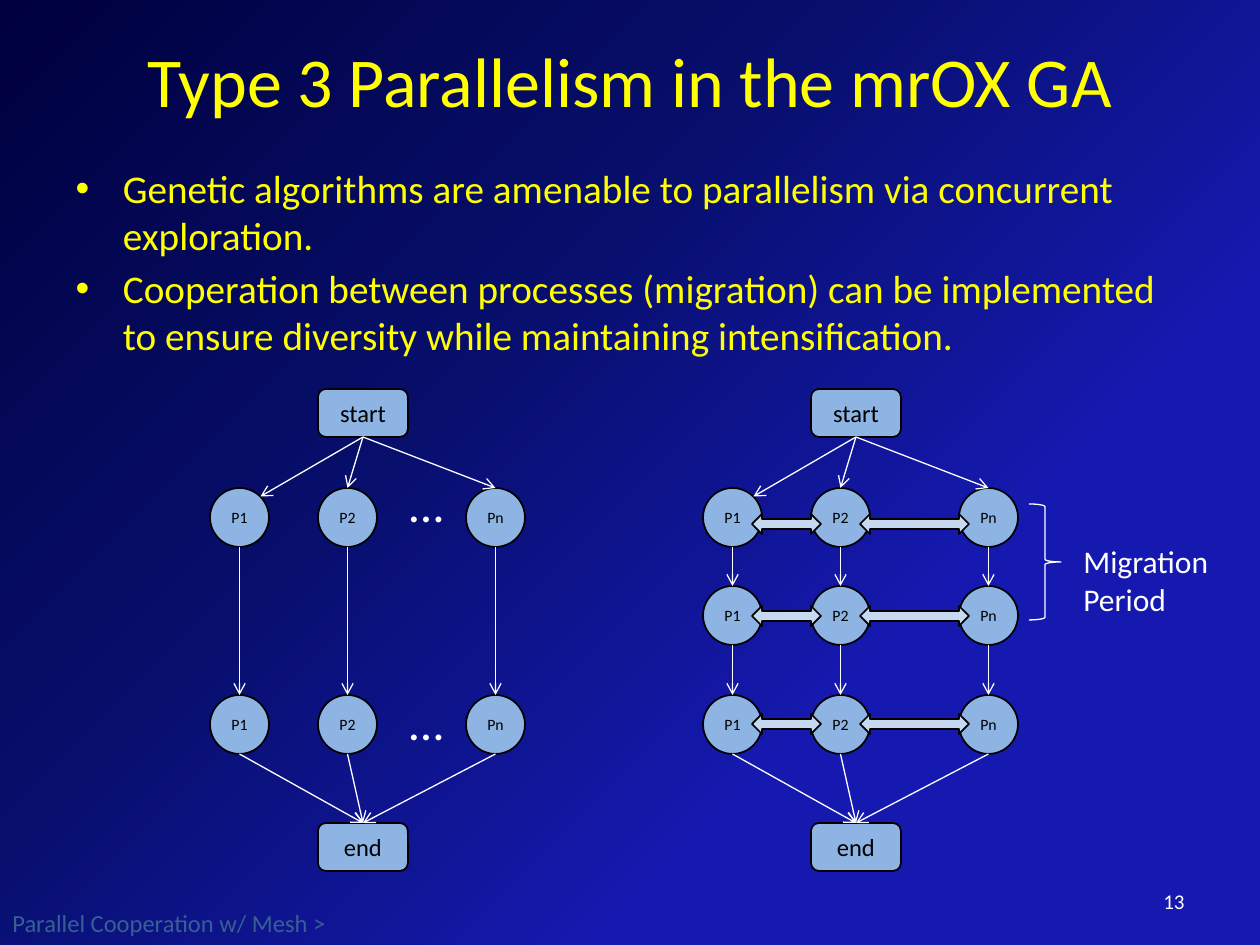
from lxml import etree
from pptx import Presentation
from pptx import util as u
from pptx.dml.color import RGBColor
from pptx.enum import shapes as s, text as t
from pptx.oxml import ns

# Content
TITLE = "Type 3 Parallelism in the mrOX GA"
BULLETS = [
    "Genetic algorithms are amenable to parallelism via concurrent exploration.",
    "Cooperation between processes (migration) can be implemented to ensure "
    "diversity while maintaining intensification.",
]
PROCESSES = {"P1": 210, "P2": 318, "Pn": 466}  # left edges in the first diagram
DIAGRAMS = [
    {"dx": 0, "rows": [488, 695], "dots": [467, 685], "migrations": []},
    {"dx": 493, "rows": [488, 586, 695], "dots": [], "migrations": [514, 606, 714]},
]
MIGRATION_LABEL = ["Migration", "Period"]
SLIDE_NUMBER = "13"
BREADCRUMB = "Parallel Cooperation w/ Mesh >"

# Format
COLORS = {"heading": "FFFF00", "node": "8EB4E3", "migration": "C6D9F1",
          "dark": "000000", "light": "FFFFFF", "breadcrumb": "376092"}
BACKGROUND = [(0, "00003E"), (36, "070E69"), (70, "1519AF"), (100, "1519AF")]
FONT = "Calibri"
NODE = 59
TERMINAL_LEFT, TERMINAL_W, TERMINAL_H = 318, 90, 48
START_TOP, END_TOP = 389, 823
NO_INSETS = {f"margin_{side}": 0 for side in ("left", "right", "top", "bottom")}


def px(value):
    return u.Emu(round(value * 914400 / 126))


def rgb(name):
    return RGBColor.from_string(COLORS[name])


def set_all(target, values):
    for key, value in values.items():
        setattr(target, key, value)


def place(part, left, top, width, height):
    set_all(part, {"left": px(left), "top": px(top),
                   "width": px(width), "height": px(height)})


def write(frame, lines, size, color, align=None, space=None, **frame_format):
    set_all(frame, frame_format)
    for i, line in enumerate(lines):
        paragraph = frame.paragraphs[0] if i == 0 else frame.add_paragraph()
        set_all(paragraph, {"alignment": align, "space_before": space})
        run = paragraph.add_run()
        run.text = line
        set_all(run.font, {"size": u.Pt(size), "name": FONT})
        run.font.color.rgb = rgb(color)


def add_label(parent, box, lines, size, color, align=None, **frame_format):
    label = parent.add_textbox(*map(px, box))
    write(label.text_frame, lines, size, color, align,
          **{"word_wrap": False, **frame_format})


def add_outline(parent, kind, box, line="dark", width=1, fill=None):
    part = parent.add_shape(kind, *map(px, box))
    part.shadow.inherit = False
    if fill:
        part.fill.solid()
        part.fill.fore_color.rgb = rgb(fill)
    else:
        part.fill.background()
    part.line.color.rgb = rgb(line)
    part.line.width = u.Pt(width)
    return part


def add_node(parent, kind, box, name, size):
    node = add_outline(parent, kind, box, fill="node")
    write(node.text_frame, [name], size, "dark", t.PP_ALIGN.CENTER,
          vertical_anchor=t.MSO_ANCHOR.MIDDLE, word_wrap=False, **NO_INSETS)


def add_arrow(parent, start, end):
    arrow = parent.add_connector(s.MSO_CONNECTOR.STRAIGHT, *map(px, (*start, *end)))
    arrow.line.color.rgb = rgb("light")
    arrow.line.width = u.Pt(0.75)
    etree.SubElement(arrow.line._get_or_add_ln(), ns.qn("a:tailEnd"), type="arrow")
    etree.SubElement(arrow._element.spPr, ns.qn("a:effectLst"))


def add_diagram(slide, dx, rows, dots, migrations):
    parts = slide.shapes.add_group_shape().shapes
    lefts = [left + dx for left in PROCESSES.values()]
    centers = [left + NODE / 2 for left in lefts]
    terminal = TERMINAL_LEFT + dx
    middle = terminal + TERMINAL_W / 2

    # Start, end and processes
    for name, top in (("start", START_TOP), ("end", END_TOP)):
        add_node(parts, s.MSO_SHAPE.ROUNDED_RECTANGLE,
                 (terminal, top, TERMINAL_W, TERMINAL_H), name, 14)
    for top in rows:
        for name, left in zip(PROCESSES, lefts):
            add_node(parts, s.MSO_SHAPE.OVAL, (left, top, NODE, NODE), name, 9)
    for top in dots:
        add_label(parts, (397 + dx, top, 55, 68), ["…"], 28, "light")

    # Flow arrows; the first one meets its circle at the upper right
    for i, center in enumerate(centers):
        reach = 21 if i == 0 else 0
        drop = NODE / 2 - reach if i == 0 else 0
        add_arrow(parts, (middle, START_TOP + TERMINAL_H),
                  (center + reach, rows[0] + drop))
        for upper, lower in zip(rows, rows[1:]):
            add_arrow(parts, (center, upper + NODE), (center, lower))
        add_arrow(parts, (center, rows[-1] + NODE), (middle, END_TOP))

    # Migrations overlap both neighbouring circles by 10 px
    for top in migrations:
        for left, following in zip(lefts, lefts[1:]):
            begin, end = left + NODE - 10, following + 10
            add_outline(parts, s.MSO_SHAPE.LEFT_RIGHT_ARROW,
                        (begin, top, end - begin, 20), fill="migration")
    if migrations:
        add_outline(parts, s.MSO_SHAPE.RIGHT_BRACE, (1029, 504, 32, 116),
                    line="light", width=0.75)
        add_label(parts, (1071, 536, 151, 89), MIGRATION_LABEL, 18, "light")


def set_background(slide):
    fill = slide.background.fill
    fill.gradient()
    fill.gradient_angle = 315
    stops = slide.background._cSld.find(".//" + ns.qn("a:gsLst"))
    for stop in list(stops):
        stops.remove(stop)
    for position, color in BACKGROUND:
        stop = etree.SubElement(stops, ns.qn("a:gs"), pos=str(position * 1000))
        etree.SubElement(stop, ns.qn("a:srgbClr"), val=color)


def main():
    deck = Presentation()
    deck.slide_width, deck.slide_height = px(1260), px(945)
    slide = deck.slides.add_slide(deck.slide_layouts[1])
    set_background(slide)

    # Title and bullets
    title, body = slide.placeholders
    place(title, 63, 0, 1134, 158)
    write(title.text_frame, [TITLE], 40, "heading", t.PP_ALIGN.CENTER,
          vertical_anchor=t.MSO_ANCHOR.MIDDLE, auto_size=t.MSO_AUTO_SIZE.NONE)
    place(body, 63, 158, 1134, 220)
    write(body.text_frame, BULLETS, 22.4, "heading", space=u.Pt(3.5),
          auto_size=t.MSO_AUTO_SIZE.NONE)

    # Diagrams
    for diagram in DIAGRAMS:
        add_diagram(slide, **diagram)

    # Footer
    add_label(slide.shapes, (903, 876, 294, 50), [SLIDE_NUMBER], 12, "light",
              t.PP_ALIGN.RIGHT, vertical_anchor=t.MSO_ANCHOR.MIDDLE, word_wrap=True)
    add_label(slide.shapes, (0, 902, 341, 43), [BREADCRUMB], 14, "breadcrumb")
    deck.save("out.pptx")


if __name__ == "__main__":
    main()
